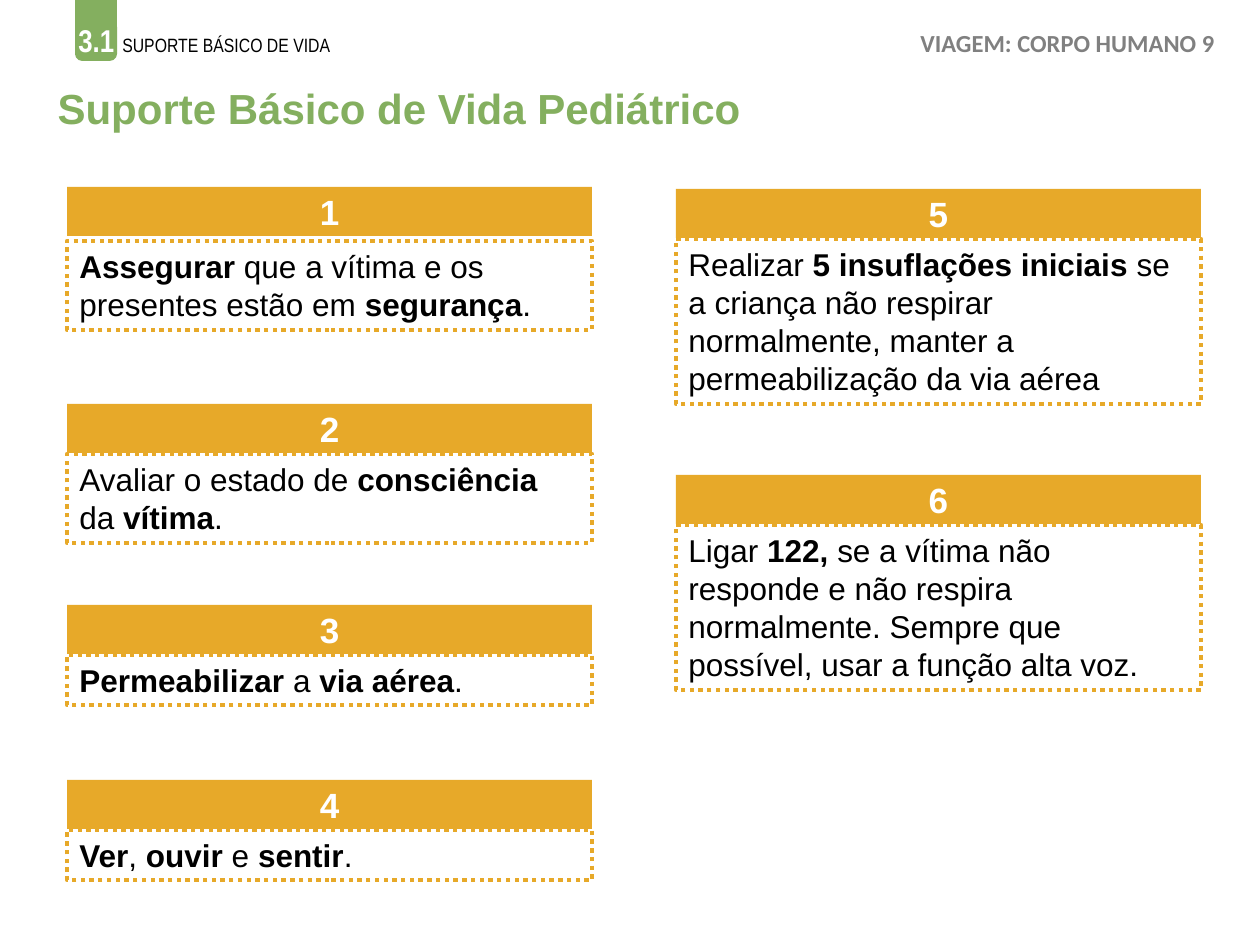
from dataclasses import dataclass

from pptx import Presentation
from pptx.dml.color import RGBColor
from pptx.enum.dml import MSO_LINE
from pptx.enum.shapes import MSO_SHAPE
from pptx.enum.text import MSO_ANCHOR, MSO_AUTO_SIZE, PP_ALIGN
from pptx.util import Pt

RECT, ROUNDED = MSO_SHAPE.RECTANGLE, MSO_SHAPE.ROUNDED_RECTANGLE
LEFT, CENTER = PP_ALIGN.LEFT, PP_ALIGN.CENTER
TOP, MIDDLE = MSO_ANCHOR.TOP, MSO_ANCHOR.MIDDLE
GROW, FIXED = MSO_AUTO_SIZE.SHAPE_TO_FIT_TEXT, MSO_AUTO_SIZE.NONE
DOTTED = MSO_LINE.ROUND_DOT
EMU_PER_PX = 914400 / 126


@dataclass(frozen=True)
class Theme:
    green: str = "84AF5F"
    lime: str = "AFC439"
    amber: str = "E7A929"
    gray: str = "808080"
    black: str = "000000"
    white: str = "FFFFFF"
    font: str = "Arial"
    narrow: str = "Arial Narrow"
    label: str = "Calibri"
    title_size: int = 24
    number_size: int = 20
    body_size: int = 18
    label_size: int = 14
    small_size: int = 11
    border: float = 2.5


def px(*values):
    return [round(v * EMU_PER_PX) for v in values]


class Deck:
    def __init__(self, prs, theme):
        self.theme = theme
        self.s = prs.slides.add_slide(prs.slide_layouts[5])

    def style(self, r, size, color, bold=False, font=None):
        r.font.name = font or self.theme.font
        r.font.size = Pt(size)
        r.font.bold = bold
        r.font.color.rgb = RGBColor.from_string(color)

    def title(self, text, x, y, w, h):
        sp = self.s.shapes.title
        sp.left, sp.top, sp.width, sp.height = px(x, y, w, h)
        tf = sp.text_frame
        tf.text = text
        tf.auto_size = FIXED
        tf.vertical_anchor = MIDDLE
        p = tf.paragraphs[0]
        p.alignment = LEFT
        p.line_spacing = 0.9
        self.style(p.runs[0], self.theme.title_size, self.theme.green, True)

    def box(self, x, y, w, h, fill=None, line=None, kind=RECT):
        sp = self.s.shapes.add_shape(kind, *px(x, y, w, h))
        sp.shadow.inherit = False
        if fill:
            sp.fill.solid()
            sp.fill.fore_color.rgb = RGBColor.from_string(fill)
        else:
            sp.fill.background()
        if line:
            sp.line.color.rgb = RGBColor.from_string(line)
            sp.line.width = Pt(self.theme.border)
            sp.line.dash_style = DOTTED
        else:
            sp.line.fill.background()
        return sp

    def text(self, runs, x, y, w, h, align=LEFT):
        tf = self.s.shapes.add_textbox(*px(x, y, w, h)).text_frame
        tf.word_wrap = True
        tf.auto_size = GROW
        p = tf.paragraphs[0]
        p.alignment = align
        for text, *look in runs:
            r = p.add_run()
            r.text = text
            self.style(r, *look)

    def step(self, number, markup, x, y, w, body_h, offset=50):
        t = self.theme
        tf = self.box(x, y, w, 49, fill=t.amber).text_frame
        tf.text = str(number)
        tf.vertical_anchor = MIDDLE
        p = tf.paragraphs[0]
        p.alignment = CENTER
        self.style(p.runs[0], t.number_size, t.white, True)

        tf = self.box(x, y + offset, w, body_h, line=t.amber).text_frame
        tf.word_wrap = True
        tf.auto_size = GROW
        tf.vertical_anchor = TOP
        p = tf.paragraphs[0]
        p.alignment = LEFT
        p.space_after = Pt(6)
        for i, part in enumerate(markup.split("*")):
            if part:
                r = p.add_run()
                r.text = part
                self.style(r, t.body_size, t.black, i % 2 == 1)


def main():
    prs = Presentation()
    prs.slide_width, prs.slide_height = px(1260, 945)
    t = Theme()
    deck = Deck(prs, t)

    deck.box(75, -17, 42, 78, fill=t.green, kind=ROUNDED)
    deck.text([("3.1", t.body_size, t.white, True, t.narrow),
               (" ", t.number_size, t.lime, True, t.narrow),
               ("SUPORTE BÁSICO DE VIDA", t.small_size, t.black, False, t.narrow)],
              66, 11, 901, 55)
    deck.text([("VIAGEM: CORPO HUMANO 9", t.label_size, t.gray, True, t.label)],
              905, 22, 325, 42, CENTER)
    deck.title("Suporte Básico de Vida Pediátrico", 45, 72, 738, 78)

    left, right, width = 67, 676, 525
    one_line, two_lines, four_lines = 50, 89, 165
    deck.step(1, "*Assegurar* que a vítima e os presentes estão em *segurança*.",
              left, 187, width, two_lines, offset=54)
    steps = [
        (2, "Avaliar o estado de *consciência* da *vítima*.", left, 404, two_lines),
        (3, "*Permeabilizar* a *via aérea*.", left, 605, one_line),
        (4, "*Ver*, *ouvir* e *sentir*.", left, 780, one_line),
        (5, "Realizar* 5 insuflações iniciais *se a criança não respirar "
            "normalmente, manter a permeabilização da via aérea", right, 189, four_lines),
        (6, "Ligar* 122, *se a vítima não responde e não respira normalmente. "
            "Sempre que possível, usar a função alta voz.", right, 475, four_lines),
    ]
    for number, markup, x, y, body_h in steps:
        deck.step(number, markup, x, y, width, body_h)

    prs.save("out.pptx")


if __name__ == "__main__":
    main()
